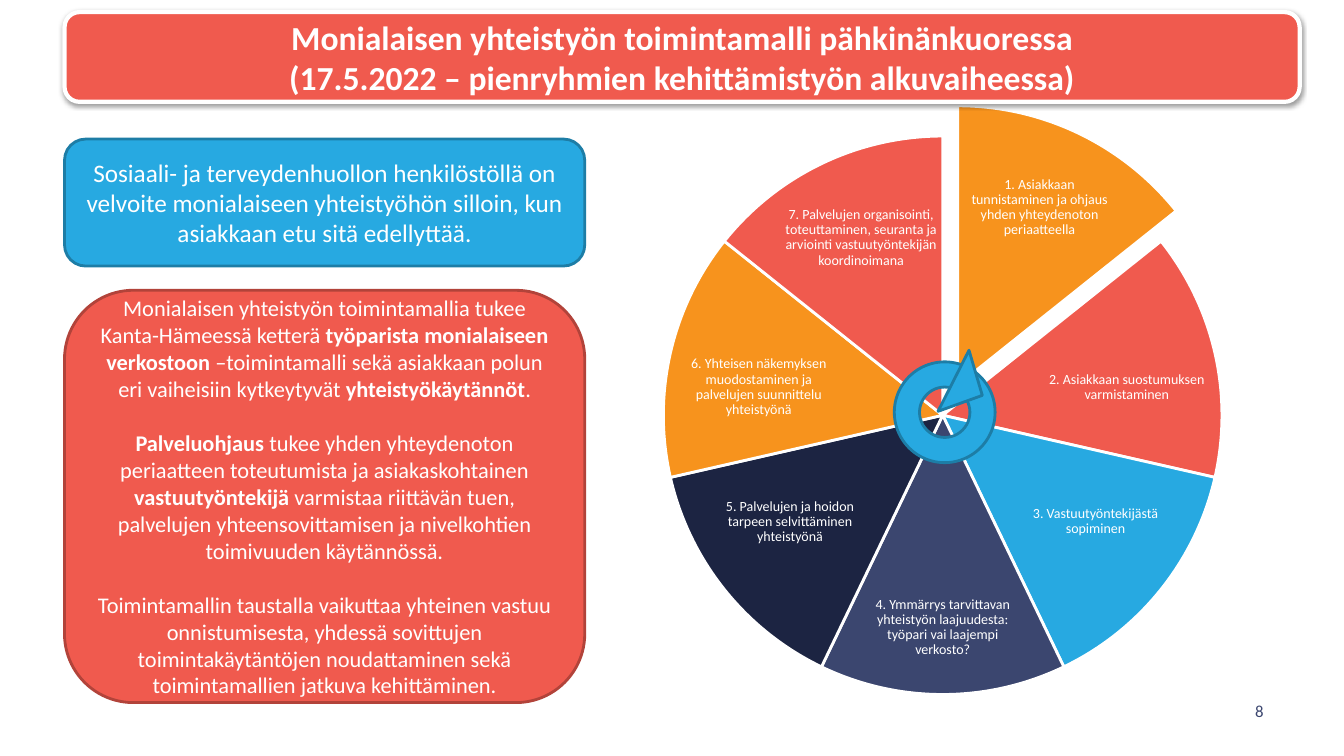
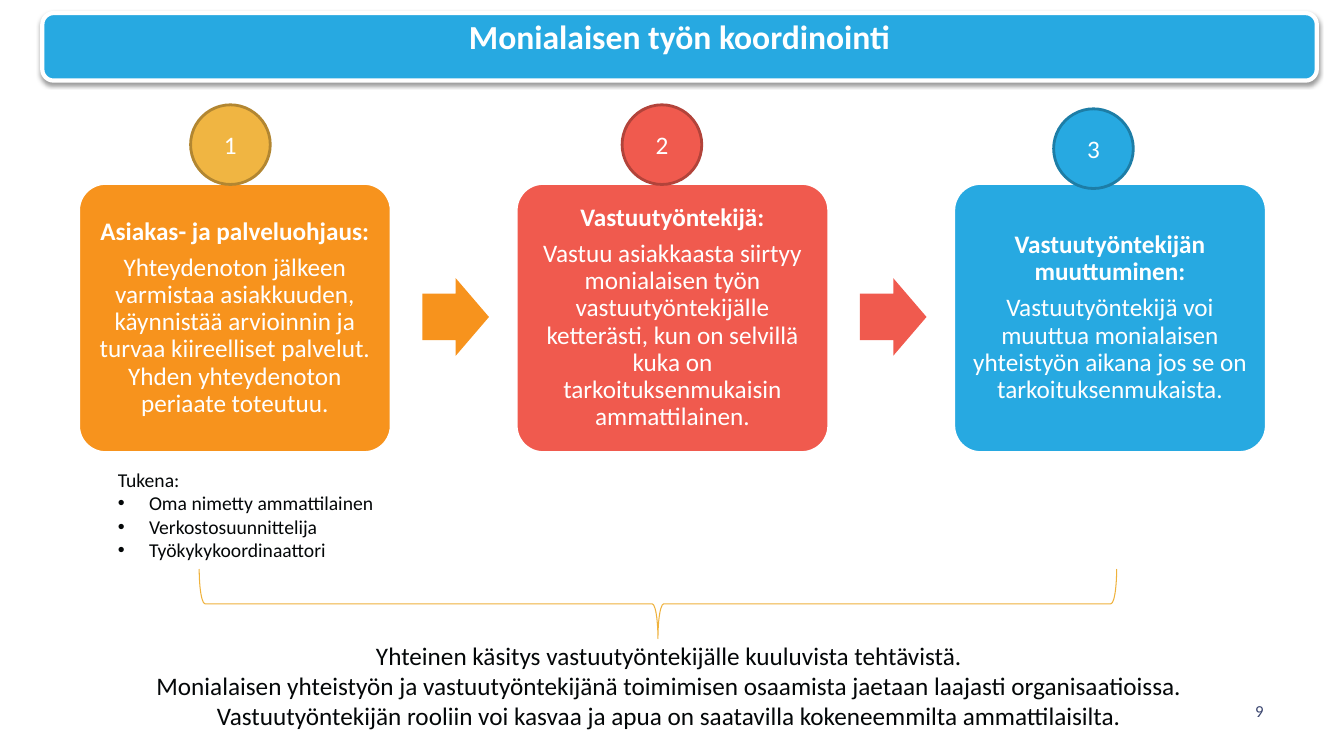
from lxml import etree
from pptx import Presentation
from pptx.dml.color import RGBColor
from pptx.enum import shapes, text
from pptx.oxml import ns
from pptx.util import Inches, Pt

WHITE, BLACK, NAVY, SLATE = "FFFFFF", "040708", "1C2442", "3B466F"
BLUE, RED, ORANGE, YELLOW = "27A9E1", "F05A4E", "F7931D", "F0B542"
OUTLINES = {BLUE: "1D7DA6", RED: "B2433A", YELLOW: "B28631"}
SHAPE = shapes.MSO_SHAPE
CENTER, LEFT = text.PP_ALIGN.CENTER, text.PP_ALIGN.LEFT
TOP, MIDDLE = text.MSO_ANCHOR.TOP, text.MSO_ANCHOR.MIDDLE


def rgb(color):
    return RGBColor.from_string(color)


def child(parent, name, **attributes):
    return etree.SubElement(parent, ns.qn(name), attributes)


def write(frame, paragraphs, size=18, color=WHITE, bold=False, align=CENTER,
          anchor=MIDDLE, margins=(0.1, 0.05), line=None, after=0, gap=0):
    frame.word_wrap = True
    frame.vertical_anchor = anchor
    frame.margin_left = frame.margin_right = Inches(margins[0])
    frame.margin_top = frame.margin_bottom = Inches(margins[1])
    for index, content in enumerate(paragraphs):
        paragraph = frame.add_paragraph() if index else frame.paragraphs[0]
        if content.startswith("• "):
            content = content[2:]
            properties = paragraph._p.get_or_add_pPr()
            properties.set("marL", str(Inches(0.31)))
            properties.set("indent", str(-Inches(0.31)))
            child(properties, "a:buFont", typeface="Arial")
            child(properties, "a:buChar", char="•")
        paragraph.alignment = align
        paragraph.line_spacing = line
        paragraph.space_after = Pt(after)
        paragraph.space_before = Pt(gap if index else 0)
        for position, part in enumerate(content.split("**")):
            if part:
                run = paragraph.add_run()
                run.text = part
                run.font.name = "Calibri"
                run.font.size = Pt(size)
                run.font.bold = bold or position % 2 == 1
                run.font.color.rgb = rgb(color)


class Deck:
    """Holds the shared style and the slide being built."""

    def __init__(self):
        self.presentation = Presentation()
        self.presentation.slide_width = Inches(13.33)
        self.presentation.slide_height = Inches(7.5)
        self.slide = None

    def new_slide(self, number):
        self.slide = self.presentation.slides.add_slide(self.presentation.slide_layouts[6])
        self.label((12.09, 6.85, 0.8, 0.4), [number], size=12, color=SLATE)

    def label(self, box, paragraphs, **style):
        shape = self.slide.shapes.add_textbox(*map(Inches, box))
        write(shape.text_frame, paragraphs, **style)

    def shape(self, kind, box, fill=None, outline=None, width=2,
              adjustments=(), rotation=0, paragraphs=(), **style):
        shape = self.slide.shapes.add_shape(kind, *map(Inches, box))
        shape.shadow.inherit = False
        shape.rotation = rotation
        for index, value in enumerate(adjustments):
            shape.adjustments[index] = value
        if fill:
            shape.fill.solid()
            shape.fill.fore_color.rgb = rgb(fill)
        else:
            shape.fill.background()
        if outline:
            shape.line.color.rgb = rgb(outline)
            shape.line.width = Pt(width)
        else:
            shape.line.fill.background()
        if paragraphs:
            write(shape.text_frame, paragraphs, **style)
        return shape

    def outlined(self, kind, box, fill, **options):
        return self.shape(kind, box, fill, OUTLINES[fill], **options)

    def title(self, box, fill, lines):
        band = self.shape(SHAPE.ROUNDED_RECTANGLE, box, fill, WHITE, 3, paragraphs=lines,
                          size=24, bold=True, anchor=TOP, margins=(0, 0))
        effects = band._element.spPr.find(ns.qn("a:effectLst"))
        shadow = child(effects, "a:outerShdw", blurRad="40000", dist="20000",
                       dir="5400000", rotWithShape="0")
        child(child(shadow, "a:srgbClr", val="000000"), "a:alpha", val="38000")

    def wheel(self, sectors):
        full_turn, top = 216, 162
        step = full_turn / len(sectors)
        for index, (fill, box, caption) in enumerate(sectors):
            start = (top + index * step) % full_turn
            end = (start + step) % full_turn
            left, upper = (6.58, 1.35) if index else (6.73, 1.05)
            self.shape(SHAPE.PIE, (left, upper, 5.54, 5.54), fill, WHITE,
                       adjustments=(start, end))
            self.label(box, [caption], size=10, margins=(0.01, 0.01), line=0.9, after=3.5)


def build_model_slide(deck):
    deck.new_slide("8")
    deck.wheel([
        (ORANGE, (9.55, 1.58, 1.52, 0.96),
         "1. Asiakkaan tunnistaminen ja ohjaus yhden yhteydenoton periaatteella"),
        (RED, (10.37, 3.33, 1.61, 1.02), "2. Asiakkaan suostumuksen varmistaminen"),
        (BLUE, (10.14, 4.65, 1.45, 1.05), "3. Vastuutyöntekijästä sopiminen"),
        (SLATE, (8.61, 5.7, 1.48, 1.05),
         "4. Ymmärrys tarvittavan yhteistyön laajuudesta: työpari vai laajempi verkosto?"),
        (NAVY, (7.11, 4.65, 1.45, 1.05),
         "5. Palvelujen ja hoidon tarpeen selvittäminen yhteistyönä"),
        (ORANGE, (6.72, 3.33, 1.61, 1.02),
         "6. Yhteisen näkemyksen muodostaminen ja palvelujen suunnittelu yhteistyönä"),
        (RED, (7.78, 1.88, 1.52, 0.96),
         "7. Palvelujen organisointi, toteuttaminen, seuranta ja arviointi "
         "vastuutyöntekijän koordinoimana"),
    ])
    deck.outlined(SHAPE.ROUNDED_RECTANGLE, (0.64, 1.38, 5.16, 1.26), BLUE, paragraphs=[
        "Sosiaali- ja terveydenhuollon henkilöstöllä on velvoite monialaiseen "
        "yhteistyöhön silloin, kun asiakkaan etu sitä edellyttää."])
    deck.outlined(SHAPE.ROUNDED_RECTANGLE, (0.64, 2.88, 5.16, 4.09), RED, size=16, gap=19.5,
                  paragraphs=[
        "Monialaisen yhteistyön toimintamallia tukee Kanta-Hämeessä ketterä **työparista "
        "monialaiseen verkostoon **–toimintamalli sekä asiakkaan polun eri vaiheisiin "
        "kytkeytyvät **yhteistyökäytännöt**.",
        "**Palveluohjaus **tukee yhden yhteydenoton periaatteen toteutumista ja "
        "asiakaskohtainen **vastuutyöntekijä** varmistaa riittävän tuen, palvelujen "
        "yhteensovittamisen ja nivelkohtien toimivuuden käytännössä.",
        "Toimintamallin taustalla vaikuttaa yhteinen vastuu onnistumisesta, yhdessä "
        "sovittujen toimintakäytäntöjen noudattaminen sekä toimintamallien jatkuva "
        "kehittäminen."])
    deck.title((0.64, 0.12, 12.25, 0.89), RED, [
        "Monialaisen yhteistyön toimintamalli pähkinänkuoressa",
        "(17.5.2022 – pienryhmien kehittämistyön alkuvaiheessa)"])
    deck.outlined(SHAPE.DONUT, (8.87, 3.59, 1, 1), BLUE)
    deck.outlined(SHAPE.ISOSCELES_TRIANGLE, (9.26, 3.69, 0.68, 0.32), BLUE, rotation=116.9)


def build_coordination_slide(deck):
    deck.new_slide("9")
    steps = [
        (ORANGE, YELLOW, 1.04, "Asiakas- ja palveluohjaus:",
         "Yhteydenoton jälkeen varmistaa asiakkuuden, käynnistää arvioinnin ja turvaa "
         "kiireelliset palvelut. Yhden yhteydenoton periaate toteutuu."),
        (RED, RED, 1.04, "Vastuutyöntekijä:",
         "Vastuu asiakkaasta siirtyy monialaisen työn vastuutyöntekijälle ketterästi, kun "
         "on selvillä kuka on tarkoituksenmukaisin ammattilainen."),
        (BLUE, BLUE, 1.08, "Vastuutyöntekijän muuttuminen:",
         "Vastuutyöntekijä voi muuttua monialaisen yhteistyön aikana jos se on "
         "tarkoituksenmukaista."),
    ]
    for index, (fill, badge, badge_top, heading, body) in enumerate(steps):
        offset = 4.34 * index
        deck.shape(SHAPE.ROUNDED_RECTANGLE, (0.78 + offset, 1.82, 3.1, 2.67), fill, WHITE,
                   adjustments=[0.1], paragraphs=[f"**{heading}**", body],
                   margins=(0.07, 0.07), line=0.9, after=6.3)
        if index < len(steps) - 1:
            deck.shape(SHAPE.RIGHT_ARROW, (4.19 + offset, 2.76, 0.66, 0.77), fill,
                       adjustments=(0.6, 0.5))
        deck.outlined(SHAPE.OVAL, (1.89 + 4.28 * index, badge_top, 0.79, 0.79), badge,
                      paragraphs=[str(index + 1)])
    deck.shape(SHAPE.RIGHT_BRACE, (6.18, 1.44, 0.69, 9.1), outline="EFB23C", width=0.75,
               rotation=90)
    deck.label((1.3, 6.3, 10.67, 1.01), [
        "Yhteinen käsitys vastuutyöntekijälle kuuluvista tehtävistä.",
        "Monialaisen yhteistyön ja vastuutyöntekijänä toimimisen osaamista jaetaan "
        "laajasti organisaatioissa.",
        "Vastuutyöntekijän rooliin voi kasvaa ja apua on saatavilla kokeneemmilta "
        "ammattilaisilta."], color=BLACK, anchor=TOP)
    deck.title((0.42, 0.13, 12.64, 0.67), BLUE, ["Monialaisen työn koordinointi"])
    deck.label((1.07, 4.59, 3.64, 1.04), [
        "Tukena:", "• Oma nimetty ammattilainen", "• Verkostosuunnittelija",
        "• Työkykykoordinaattori"], size=14, color=BLACK, align=LEFT, anchor=TOP)


def main():
    deck = Deck()
    build_model_slide(deck)
    build_coordination_slide(deck)
    deck.presentation.save("out.pptx")


if __name__ == "__main__":
    main()
